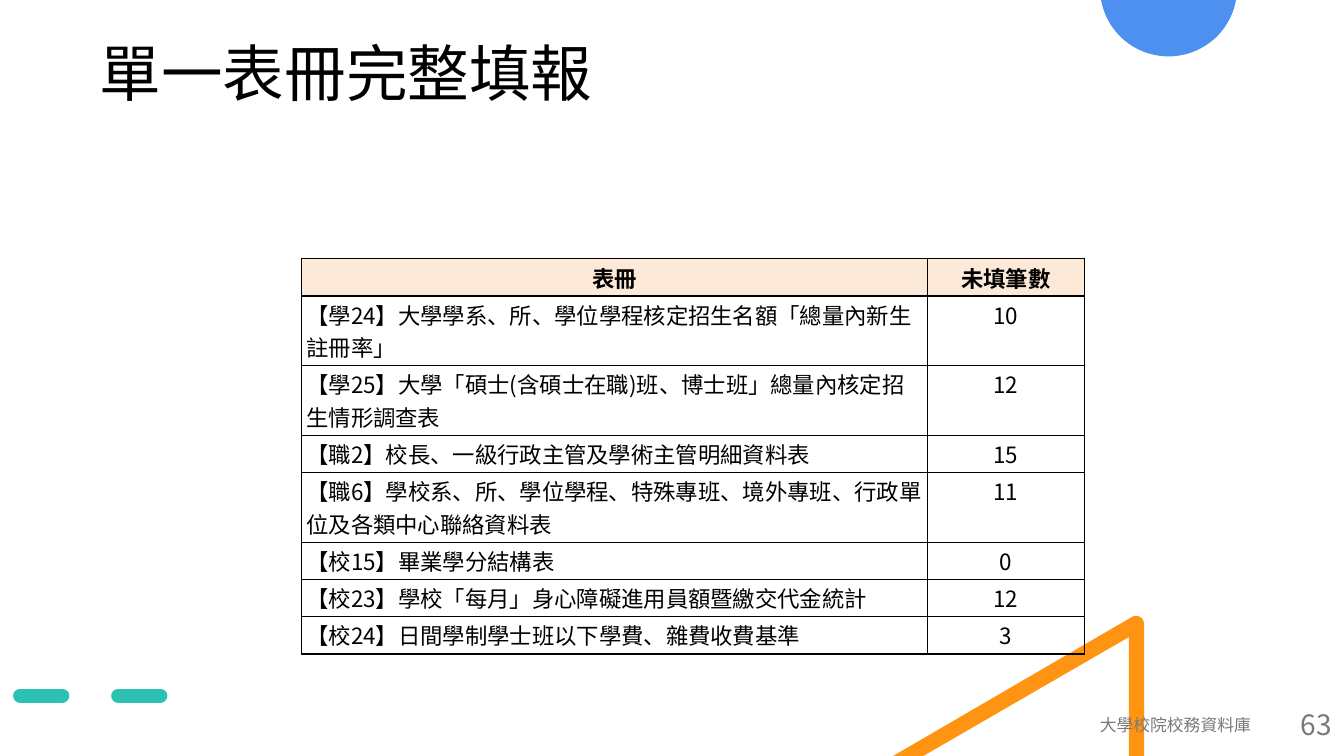
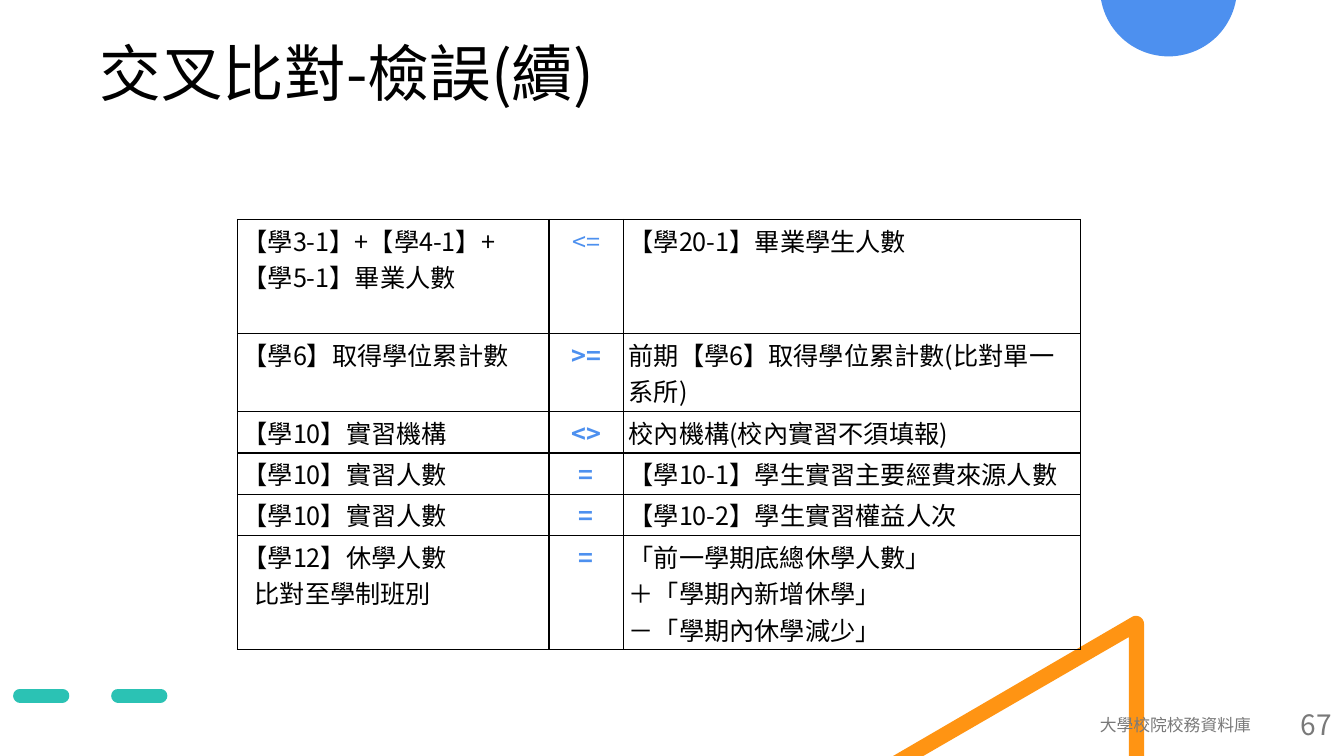
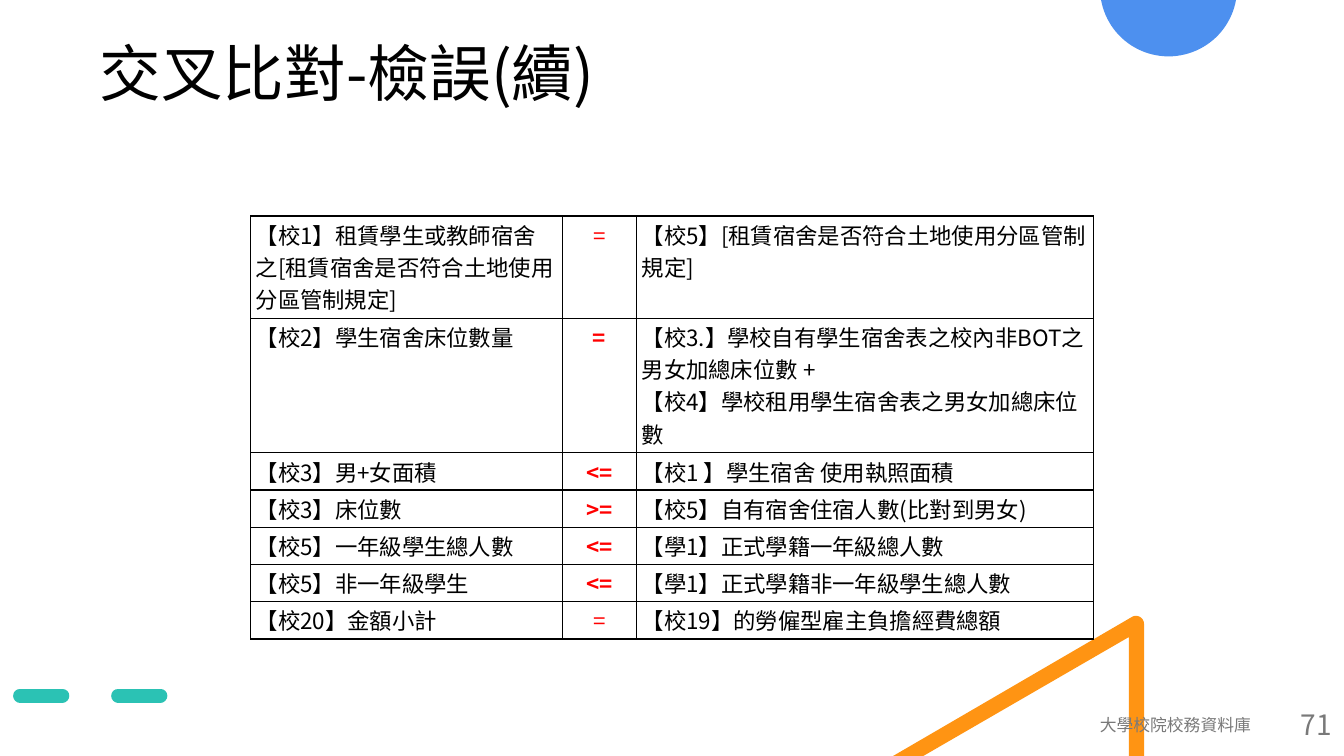
import dataclasses
import math

import lxml.etree
import pptx
import pptx.dml.color
import pptx.enum.dml
import pptx.enum.shapes
import pptx.enum.text
import pptx.oxml.ns
import pptx.util

ALIGN = pptx.enum.text.PP_ALIGN
ANCHOR = pptx.enum.text.MSO_ANCHOR
SLIDE_WIDTH = pptx.util.Inches(13.333)
SLIDE_HEIGHT = pptx.util.Inches(7.5)
GRID_COLUMNS = 40
GRID_ROWS = 30


@dataclasses.dataclass(frozen=True)
class Theme:
    """Colours, type sizes and insets, in points, shared by all slides."""
    font: str = "Noto Sans CJK TC"
    text: str = "000000"
    muted: str = "797979"
    blue: str = "4D90EF"
    orange: str = "FF9413"
    teal: str = "2BC2B4"
    red: str = "FF0000"
    header: str = "FDE9D8"
    title_size: int = 44
    large_size: int = 18
    body_size: int = 16
    footer_size: int = 12
    number_size: int = 20
    line_height: float = 1.45
    border: float = 1
    dash: float = 10
    title_inset: tuple = (5, 2.2)
    cell_inset: tuple = (3.6, 1.7)
    footer_inset: tuple = (8.6, 4.3)


THEME = Theme()

UNFILLED = [
    ("表冊", "未填筆數"),
    ("【學24】大學學系、所、學位學程核定招生名額「總量內新生註冊率」", "10"),
    ("【學25】大學「碩士(含碩士在職)班、博士班」總量內核定招生情形調查表", "12"),
    ("【職2】校長、一級行政主管及學術主管明細資料表", "15"),
    ("【職6】學校系、所、學位學程、特殊專班、境外專班、行政單位及各類中心聯絡資料表", "11"),
    ("【校15】畢業學分結構表", "0"),
    ("【校23】學校「每月」身心障礙進用員額暨繳交代金統計", "12"),
    ("【校24】日間學制學士班以下學費、雜費收費基準", "3"),
]

STUDENT_CHECKS = [
    ("【學3-1】+【學4-1】+【學5-1】畢業人數", "<=", "【學20-1】畢業學生人數"),
    ("【學6】取得學位累計數", ">=", "前期【學6】取得學位累計數(比對單一系所)"),
    ("【學10】實習機構", "<>", "校內機構(校內實習不須填報)"),
    ("【學10】實習人數", "=", "【學10-1】學生實習主要經費來源人數"),
    ("【學10】實習人數", "=", "【學10-2】學生實習權益人次"),
    ("【學12】休學人數\n比對至學制班別", "=",
     "「前一學期底總休學人數」\n＋「學期內新增休學」\n－「學期內休學減少」"),
]

SCHOOL_CHECKS = [
    ("【校1】租賃學生或教師宿舍之[租賃宿舍是否符合土地使用分區管制規定]", "=",
     "【校5】[租賃宿舍是否符合土地使用分區管制規定]"),
    ("【校2】學生宿舍床位數量", "=",
     "【校3.】學校自有學生宿舍表之校內非BOT之男女加總床位數 +\n"
     "【校4】學校租用學生宿舍表之男女加總床位數"),
    ("【校3】男+女面積", "<=", "【校1 】學生宿舍 使用執照面積"),
    ("【校3】床位數", ">=", "【校5】自有宿舍住宿人數(比對到男女)"),
    ("【校5】一年級學生總人數", "<=", "【學1】正式學籍一年級總人數"),
    ("【校5】非一年級學生", "<=", "【學1】正式學籍非一年級學生總人數"),
    ("【校20】金額小計", "=", "【校19】的勞僱型雇主負擔經費總額"),
]

CHECK_COLUMNS = (9.27, 2.22, 13.59)


def across(columns):
    """Turn grid columns into a length."""
    return round(SLIDE_WIDTH * columns / GRID_COLUMNS)


def down(rows):
    """Turn grid rows into a length."""
    return round(SLIDE_HEIGHT * rows / GRID_ROWS)


def rgb(colour):
    """Turn a hex string into a colour."""
    return pptx.dml.color.RGBColor.from_string(colour)


def add_child(parent, tag, **attributes):
    """Append an XML element with the given attributes."""
    return lxml.etree.SubElement(parent, pptx.oxml.ns.qn(tag), **attributes)


def write_text(frame, text, *, size, colour=THEME.text, bold=False,
               align=ALIGN.LEFT, spacing=None):
    """Fill a text frame with one paragraph per line of text."""
    for index, line in enumerate(text.split("\n")):
        paragraph = frame.add_paragraph() if index else frame.paragraphs[0]
        paragraph.alignment = align
        paragraph.line_spacing = spacing
        run = paragraph.add_run()
        run.text = line
        run.font.size = pptx.util.Pt(size)
        run.font.bold = bold
        run.font.color.rgb = rgb(colour)
        run.font.name = THEME.font
        add_child(run._r.get_or_add_rPr(), "a:ea", typeface=THEME.font)


def set_insets(holder, inset):
    """Set the side and top insets of a text frame or cell."""
    side, top = map(pptx.util.Pt, inset)
    holder.margin_left = holder.margin_right = side
    holder.margin_top = holder.margin_bottom = top


def add_label(slide, place, text, *, inset, anchor=ANCHOR.TOP, **style):
    """Add a wrapping text box at a grid place."""
    left, top, width, height = place
    frame = slide.shapes.add_textbox(
        across(left), down(top), across(width), down(height)).text_frame
    frame.word_wrap = True
    frame.vertical_anchor = anchor
    set_insets(frame, inset)
    write_text(frame, text, **style)


def arc(centre, radius, start, end, steps=48):
    """List the points of an arc between two angles in degrees."""
    angles = [math.radians(start + (end - start) * step / steps)
              for step in range(steps + 1)]
    return [(centre[0] + radius * math.cos(angle),
             centre[1] + radius * math.sin(angle)) for angle in angles]


def add_outline(slide, points, colour):
    """Add a closed filled outline without a border."""
    builder = slide.shapes.build_freeform(*points[0])
    builder.add_line_segments(points[1:], close=True)
    outline = builder.convert_to_shape()
    outline.fill.solid()
    outline.fill.fore_color.rgb = rgb(colour)
    outline.line.fill.background()
    outline.shadow.inherit = False


def add_dashes(slide):
    """Add the round-ended dashed line at the lower left."""
    dashes = slide.shapes.add_connector(
        pptx.enum.shapes.MSO_CONNECTOR.STRAIGHT,
        across(0.6), down(27.6), across(5.85), down(27.6))
    dashes.line.color.rgb = rgb(THEME.teal)
    dashes.line.width = pptx.util.Pt(THEME.dash)
    dashes.line.dash_style = pptx.enum.dml.MSO_LINE.DASH
    properties = dashes._element.spPr
    properties.find(pptx.oxml.ns.qn("a:ln")).set("cap", "rnd")
    add_child(properties, "a:effectLst")


def add_decoration(slide):
    """Add the blue disc, orange corner and teal dashes."""
    disc_centre, disc_radius = (across(34.78), down(-0.48)), across(2.04)
    edge = math.degrees(math.asin(-disc_centre[1] / disc_radius))
    add_outline(slide, arc(disc_centre, disc_radius, edge, 180 - edge), THEME.blue)
    tip = arc((across(33.81), down(24.76)), across(0.24), 0, -120)
    legs = [(26.58, 30), (27.48, 30), (33.6, 25.28), (33.6, 30), (34.05, 30)]
    add_outline(slide, tip + [(across(x), down(y)) for x, y in legs], THEME.orange)
    add_dashes(slide)


def add_page(deck, title, number):
    """Add a slide with its decoration, title and footer."""
    slide = deck.slides.add_slide(deck.slide_layouts[6])
    add_decoration(slide)
    add_label(slide, (2.76, 1.6, 34.5, 5.8), title, inset=THEME.title_inset,
              size=THEME.title_size, spacing=0.9)
    footers = [((20.58, 27.96, 17.01, 1.6), "大學校院校務資料庫", THEME.footer_size),
               ((38.01, 27.96, 1.98, 1.6), str(number), THEME.number_size)]
    for place, text, size in footers:
        add_label(slide, place, text, inset=THEME.footer_inset, size=size,
                  anchor=ANCHOR.MIDDLE, colour=THEME.muted, align=ALIGN.RIGHT)
    return slide


def frame_cell(cell, fill):
    """Give a cell its fill and four black borders."""
    if fill:
        cell.fill.solid()
        cell.fill.fore_color.rgb = rgb(fill)
    else:
        cell.fill.background()
    properties = cell._tc.get_or_add_tcPr()
    for index, side in enumerate("LRTB"):
        border = add_child(properties, f"a:ln{side}",
                           w=str(pptx.util.Pt(THEME.border)))
        add_child(add_child(border, "a:solidFill"), "a:srgbClr", val=THEME.text)
        properties.insert(index, border)


def row_height(lines, size):
    """Work out the height of a row holding some lines of text."""
    return pptx.util.Pt(lines * size * THEME.line_height + 2 * THEME.cell_inset[1])


def add_grid(slide, corner, columns, lines, size, content, style_of):
    """Add a bordered table with rows sized by their line counts."""
    heights = [row_height(count, size) for count in lines]
    table = slide.shapes.add_table(
        len(content), len(columns), across(corner[0]), down(corner[1]),
        across(sum(columns)), sum(heights)).table
    table.first_row = table.horz_banding = False
    for column, width in zip(table.columns, columns):
        column.width = across(width)
    for row, height in zip(table.rows, heights):
        row.height = height
    for row, texts in enumerate(content):
        for column, text in enumerate(texts):
            cell = table.cell(row, column)
            style = style_of(row, column)
            frame_cell(cell, style.pop("fill", None))
            set_insets(cell, THEME.cell_inset)
            write_text(cell.text_frame, text, size=size, **style)
    return table


def unfilled_style(row, column):
    """Format the unfilled-count table: shaded header, centred counts."""
    style = {}
    if row == 0:
        style.update(bold=True, fill=THEME.header)
    if row == 0 or column == 1:
        style["align"] = ALIGN.CENTER
    return style


def check_style(operator_colour, light_rows):
    """Make a format rule for a comparison table."""
    def style_of(row, column):
        """Format the operator column apart from the others."""
        if column != 1:
            return {}
        return {"colour": operator_colour, "bold": row not in light_rows,
                "align": ALIGN.CENTER}
    return style_of


def main():
    """Build and save the slides."""
    deck = pptx.Presentation()
    deck.slide_width, deck.slide_height = SLIDE_WIDTH, SLIDE_HEIGHT

    unfilled = add_page(deck, "單一表冊完整填報", 63)
    add_grid(unfilled, (8.97, 10.27), (18.64, 4.66), (1, 2, 2, 1, 2, 1, 1, 1),
             THEME.body_size, UNFILLED, unfilled_style)

    students = add_page(deck, "交叉比對-檢誤(續)", 67)
    student_table = add_grid(
        students, (7.07, 8.71), CHECK_COLUMNS, (3, 2, 1, 1, 1, 3),
        THEME.large_size, STUDENT_CHECKS, check_style(THEME.blue, {0}))
    leave_note = student_table.cell(5, 0).text_frame.paragraphs[1]
    leave_note._p.get_or_add_pPr().set("marL", str(across(0.36)))

    school = add_page(deck, "交叉比對-檢誤(續)", 71)
    add_grid(school, (7.46, 8.57), CHECK_COLUMNS, (3, 4, 1, 1, 1, 1, 1),
             THEME.body_size, SCHOOL_CHECKS, check_style(THEME.red, {0, 6}))

    deck.save("out.pptx")


if __name__ == "__main__":
    main()
